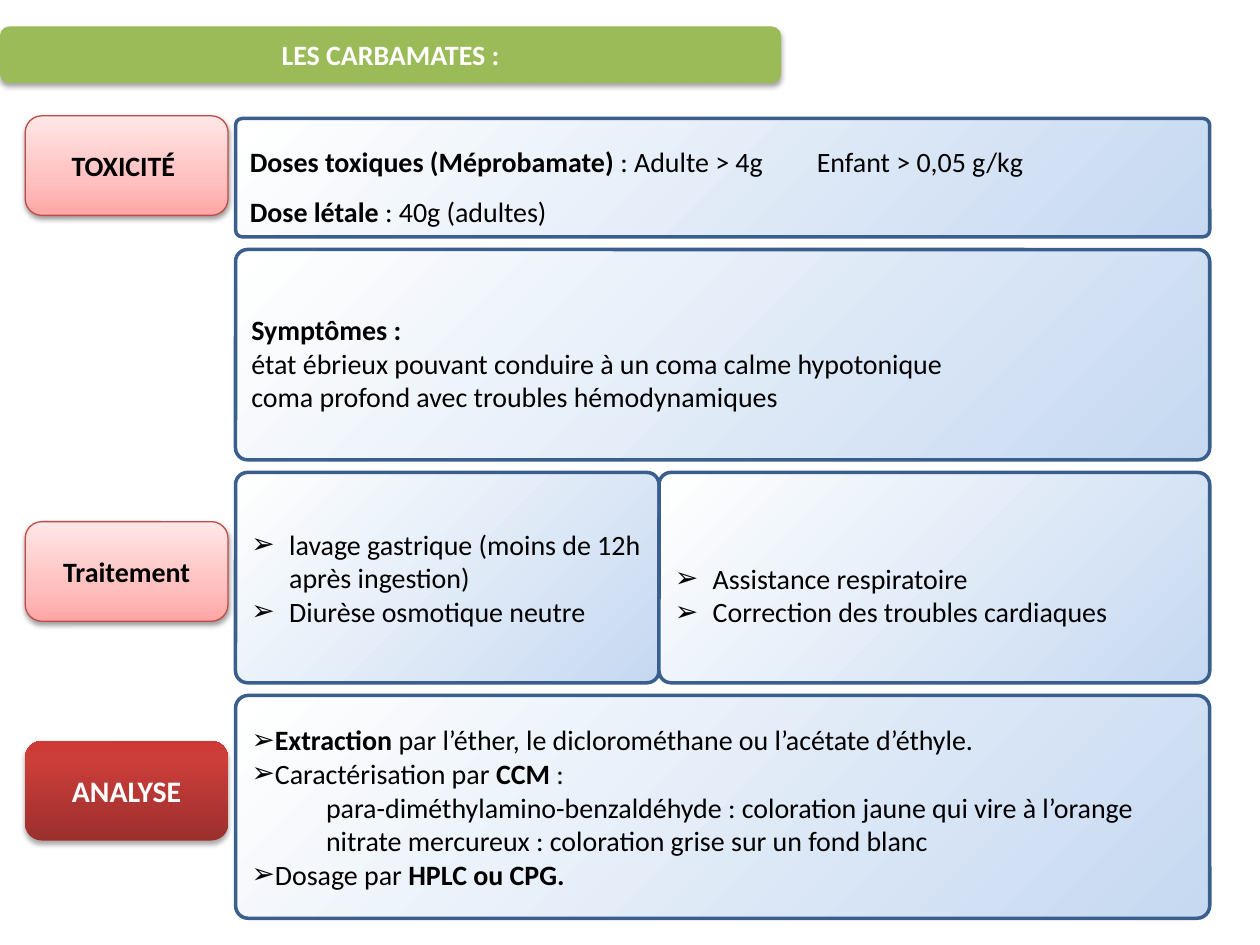
from lxml import etree
from pptx import Presentation
from pptx.dml.color import RGBColor
from pptx.enum import shapes, text
from pptx.oxml import ns
from pptx.util import Pt

BLACK = RGBColor(0, 0, 0)
WHITE = RGBColor(255, 255, 255)
GREEN = RGBColor(0x9B, 0xBB, 0x59)
BLUE = RGBColor(0x3A, 0x5F, 0x8C)
ROSE = RGBColor(0xBF, 0x4C, 0x48)
PALE = [(0, RGBColor(0xC6, 0xD9, 0xF1)), (100, WHITE)]
PINK = [(0, RGBColor(0xFF, 0xA6, 0xA5)), (35, RGBColor(0xFF, 0xC0, 0xBF)),
        (100, RGBColor(0xFF, 0xE7, 0xE7))]
RED = [(0, RGBColor(0x9C, 0x2F, 0x2D)), (80, RGBColor(0xCB, 0x3E, 0x3A)),
       (100, RGBColor(0xCE, 0x3B, 0x37))]

LEFT, WIDE, TOP, GAP = 134.6, 556.7, 67.7, 7.2
SPLIT = 242
LINE = 19.5
HANG = {"left": 21.6, "hang": -21.6, "mark": True}
FLUSH = {"mark": True}
INNER = {"left": 42.5}
LOOSE = {"space": 1.5}

TOXIC = [
    ([("Doses toxiques (Méprobamate) ", True),
      (": Adulte > 4g\tEnfant > 0,05 g/kg", False)], {"space": 1.5, "tab": 325.5}),
    ([("Dose létale ", True), (": 40g (adultes)", False)], LOOSE),
]
SIGNS = [
    ([("Symptômes :", True)], LOOSE),
    ([("état ébrieux pouvant conduire à un coma calme hypotonique", False)], {}),
    ([("coma profond avec troubles hémodynamiques", False)], {}),
]
WASH = [
    ([("lavage gastrique (moins de 12h après ingestion)", False)], HANG),
    ([("Diurèse osmotique neutre", False)], HANG),
]
CARE = [
    ([("Assistance respiratoire", False)], HANG),
    ([("Correction des troubles cardiaques", False)], HANG),
]
TESTS = [
    ([("Extraction ", True),
      ("par l’éther, le diclorométhane ou l’acétate d’éthyle.", False)], FLUSH),
    ([("Caractérisation par ", False), ("CCM ", True), (":", False)], FLUSH),
    ([("para-diméthylamino-benzaldéhyde : coloration jaune qui vire à l’orange",
       False)], INNER),
    ([("nitrate mercureux : coloration grise sur un fond blanc", False)], INNER),
    ([("Dosage par ", False), ("HPLC ou CPG.", True)], FLUSH),
]
ROWS = [
    (67.7, [(0, WIDE, TOXIC, 0)]),
    (120.2, [(0, WIDE, SIGNS, 0)]),
    (120.2, [(0, SPLIT, WASH, 0), (SPLIT, WIDE - SPLIT, CARE, LINE)]),
    (127.4, [(0, WIDE, TESTS, 0)]),
]
LABELS = [
    ("TOXICITÉ ", 66.2, PINK, ROSE, BLACK, 16, (38, 1.6)),
    ("Traitement", 298.1, PINK, ROSE, BLACK, 16, (38, 1.6)),
    ("ANALYSE", 423.4, RED, None, WHITE, 17, (35, 1.8)),
]


def add(parent, tag, **attrs):
    values = {k: str(v) for k, v in attrs.items()}
    return etree.SubElement(parent, ns.qn("a:" + tag), values)


def blend(box, stops, round_):
    grad = add(box.element.spPr, "gradFill", rotWithShape=1)
    steps = add(grad, "gsLst")
    for pos, color in stops:
        add(add(steps, "gs", pos=pos * 1000), "srgbClr", val=color)
    if round_:
        add(add(grad, "path", path="circle"), "fillToRect", l=100000, t=100000)
    else:
        add(grad, "lin", ang=16200000, scaled=0)


def make(x, y, w, h, fill, line=None, width=0, shade=None, curve=None):
    box = slide.shapes.add_shape(shapes.MSO_SHAPE.ROUNDED_RECTANGLE,
                                 Pt(x), Pt(y), Pt(w), Pt(h))
    if curve:
        box.adjustments[0] = curve
    if isinstance(fill, list):
        blend(box, fill, fill is PALE)
    else:
        box.fill.solid()
        box.fill.fore_color.rgb = fill
    if line is None:
        box.line.fill.background()
    else:
        box.line.color.rgb = line
        box.line.width = Pt(width)
    box.shadow.inherit = False
    if shade:
        alpha, dist = shade
        effect = box.element.spPr.find(ns.qn("a:effectLst"))
        cast = add(effect, "outerShdw", blurRad=Pt(3.1), dist=Pt(dist),
                   dir=5400000, rotWithShape=0)
        add(add(cast, "srgbClr", val="000000"), "alpha", val=alpha * 1000)
    return box


def style(para, left=0, hang=0, mark=False, space=None, tab=None):
    para.alignment = text.PP_ALIGN.LEFT
    if space:
        para.line_spacing = space
    props = para._p.get_or_add_pPr()
    props.set("marL", str(Pt(left)))
    props.set("indent", str(Pt(hang)))
    if mark:
        add(props, "buFont", typeface="Arial")
        add(props, "buChar", char="➢")
    if tab:
        add(add(props, "tabLst"), "tab", pos=Pt(tab), algn="l")


def write(box, paras, color=BLACK, size=16):
    frame = box.text_frame
    frame.word_wrap = True
    frame.vertical_anchor = text.MSO_ANCHOR.MIDDLE
    for i, (runs, look) in enumerate(paras):
        para = frame.add_paragraph() if i else frame.paragraphs[0]
        if look is None:
            para.alignment = text.PP_ALIGN.CENTER
        else:
            style(para, **look)
        for words, bold in runs:
            run = para.add_run()
            run.text = words
            run.font.name = "Calibri"
            run.font.size = Pt(size)
            run.font.bold = bold
            run.font.color.rgb = color


deck = Presentation()
deck.slide_width, deck.slide_height = Pt(720), Pt(540)
slide = deck.slides.add_slide(deck.slide_layouts[6])

y = TOP
for high, cells in ROWS:
    for x, w, paras, drop in cells:
        panel = make(LEFT + x, y, w, high, PALE, BLUE, 2, curve=0.057)
        panel.text_frame.margin_top = Pt(3.6 + drop)
        write(panel, paras)
    y += high + GAP

for name, y, fill, line, color, size, shade in LABELS:
    label = make(14.4, y, 115.9, 56.9, fill, line, 0.75, shade)
    write(label, [([(name, True)], None)], color, size)

title = make(0, 15.1, 446.4, 32.4, GREEN, shade=(35, 1.8))
write(title, [([("LES CARBAMATES :", True)], None)], WHITE)

deck.save("out.pptx")
